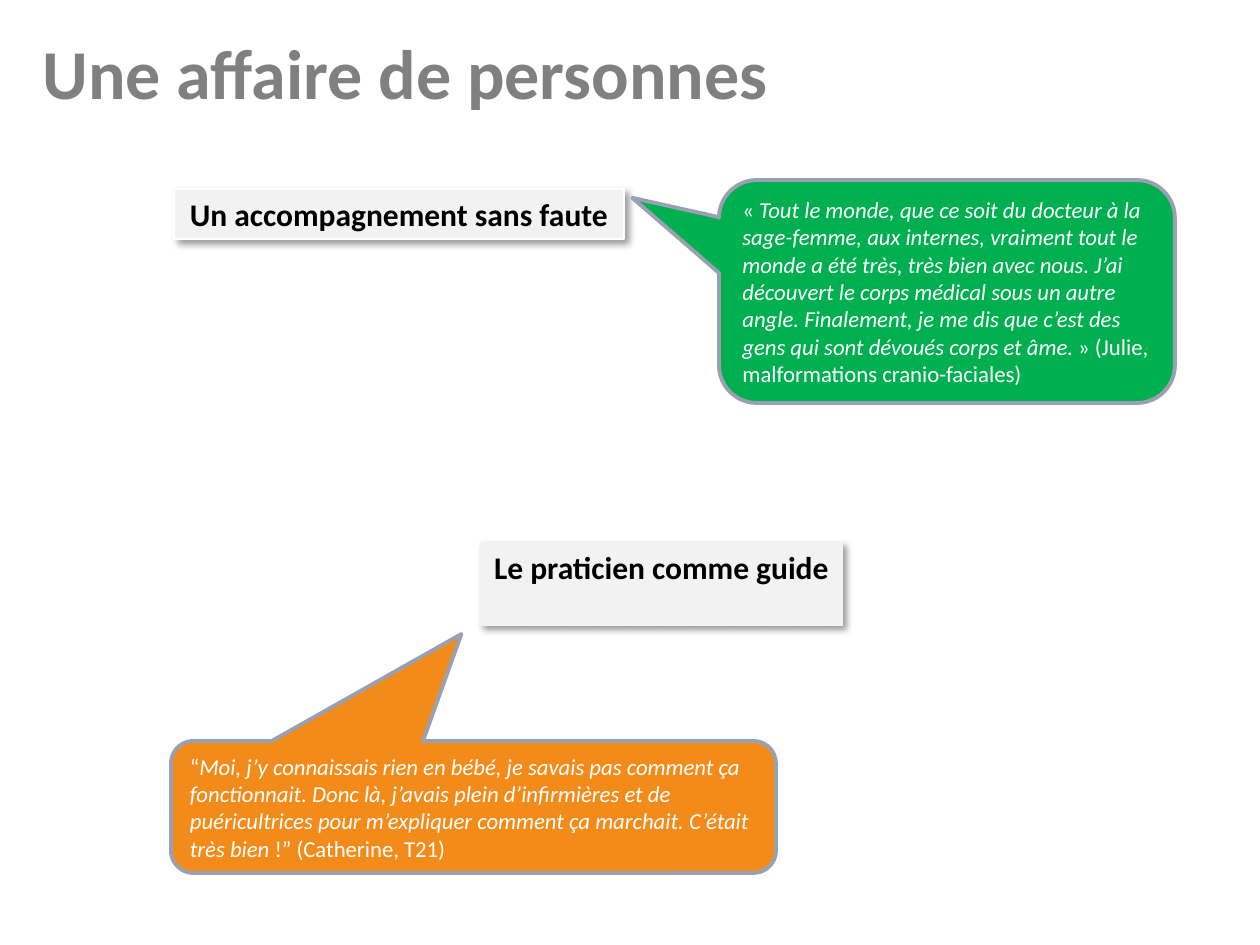
from lxml import etree
from pptx import Presentation
from pptx.dml.color import RGBColor
from pptx.enum.shapes import MSO_SHAPE
from pptx.enum.text import MSO_ANCHOR, MSO_AUTO_SIZE, PP_ALIGN
from pptx.oxml.ns import qn
from pptx.util import Pt

PX = 914400 // 126
FONT = "Calibri"
RECT, CALLOUT = MSO_SHAPE.RECTANGLE, MSO_SHAPE.ROUNDED_RECTANGULAR_CALLOUT
TOP, MIDDLE = MSO_ANCHOR.TOP, MSO_ANCHOR.MIDDLE
LEFT, CENTER = PP_ALIGN.LEFT, PP_ALIGN.CENTER

WHITE = RGBColor(0xFF, 0xFF, 0xFF)
BLACK = RGBColor(0, 0, 0)
GREY = RGBColor(0x80, 0x80, 0x80)
PALE = RGBColor(0xF2, 0xF2, 0xF2)
GREEN = RGBColor(0x00, 0xB0, 0x50)
ORANGE = RGBColor(0xF2, 0x8B, 0x1A)
BORDER = RGBColor(0x98, 0xA0, 0xB2)

TITLE = "Une affaire de personnes"
TITLE_BOX = (30, 23, 1260, 158)

# text, box in px, wraps, outline
LABELS = [
    ("Le praticien comme guide", (480, 542, 363, 84), False, None),
    ("Un accompagnement sans faute", (174, 189, 450, 50), True, WHITE),
]

# box in px, tail and corner adjustments, fill, (opening, quote, closing)
QUOTES = [
    ((171, 741, 605, 132), (-0.02, -1.31, 0.17), ORANGE, (
        "“",
        "Moi, j’y connaissais rien en bébé, je savais pas comment ça "
        "fonctionnait. Donc là, j’avais plein d’infirmières et de "
        "puéricultrices pour m’expliquer comment ça marchait. "
        "C’était très bien ",
        "!” (Catherine, T21)")),
    ((719, 180, 456, 223), (-0.69, -0.42, 0.17), GREEN, (
        "« ",
        "Tout le monde, que ce soit du docteur à la sage-femme, aux "
        "internes, vraiment tout le monde a été très, très bien avec nous. "
        "J’ai découvert le corps médical sous un autre angle. Finalement, "
        "je me dis que c’est des gens qui sont dévoués corps et âme.",
        " » (Julie, malformations cranio-faciales)")),
]


def emu(box):
    return [v * PX for v in box]


def add_run(p, text, size, color, bold=False, italic=False):
    r = p.add_run()
    r.text = text
    r.font.name, r.font.size = FONT, Pt(size)
    r.font.bold, r.font.italic = bold, italic
    r.font.color.rgb = color


def set_frame(tf, anchor, align, wrap=True):
    """Prepare the text frame and return its first paragraph."""
    tf.word_wrap, tf.vertical_anchor = wrap, anchor
    tf.auto_size = MSO_AUTO_SIZE.NONE
    p = tf.paragraphs[0]
    p.alignment = align
    return p


def add_box(s, kind, box, fill, line, width):
    sp = s.shapes.add_shape(kind, *emu(box))
    sp.shadow.inherit = False
    sp.fill.solid()
    sp.fill.fore_color.rgb = fill
    if line is None:
        sp.line.fill.background()
    else:
        sp.line.color.rgb = line
        sp.line.width = Pt(width)
    return sp


def add_shadow(sp):
    effects = sp._element.spPr.find(qn("a:effectLst"))
    shadow = etree.SubElement(
        effects, qn("a:outerShdw"), blurRad=str(Pt(4)), dist=str(Pt(3)),
        dir=str(45 * 60000), algn="tl", rotWithShape="0")
    color = etree.SubElement(shadow, qn("a:srgbClr"), val=str(BLACK))
    etree.SubElement(color, qn("a:alpha"), val="40000")


def main():
    prs = Presentation()
    prs.slide_width, prs.slide_height = 1260 * PX, 945 * PX
    s = prs.slides.add_slide(prs.slide_layouts[5])

    title = s.shapes.title
    title.left, title.top, title.width, title.height = emu(TITLE_BOX)
    add_run(set_frame(title.text_frame, TOP, LEFT), TITLE, 40, GREY, bold=True)

    for text, box, wrap, line in LABELS:
        sp = add_box(s, RECT, box, PALE, line, 0.75)
        add_shadow(sp)
        p = set_frame(sp.text_frame, TOP, CENTER, wrap)
        add_run(p, text, 18, BLACK, bold=True)

    for box, adjustments, fill, parts in QUOTES:
        sp = add_box(s, CALLOUT, box, fill, BORDER, 2.22)
        for i, value in enumerate(adjustments):
            sp.adjustments[i] = value
        p = set_frame(sp.text_frame, MIDDLE, LEFT)
        for text, italic in zip(parts, (False, True, False)):
            add_run(p, text, 13, WHITE, italic=italic)

    prs.save("out.pptx")


if __name__ == "__main__":
    main()
